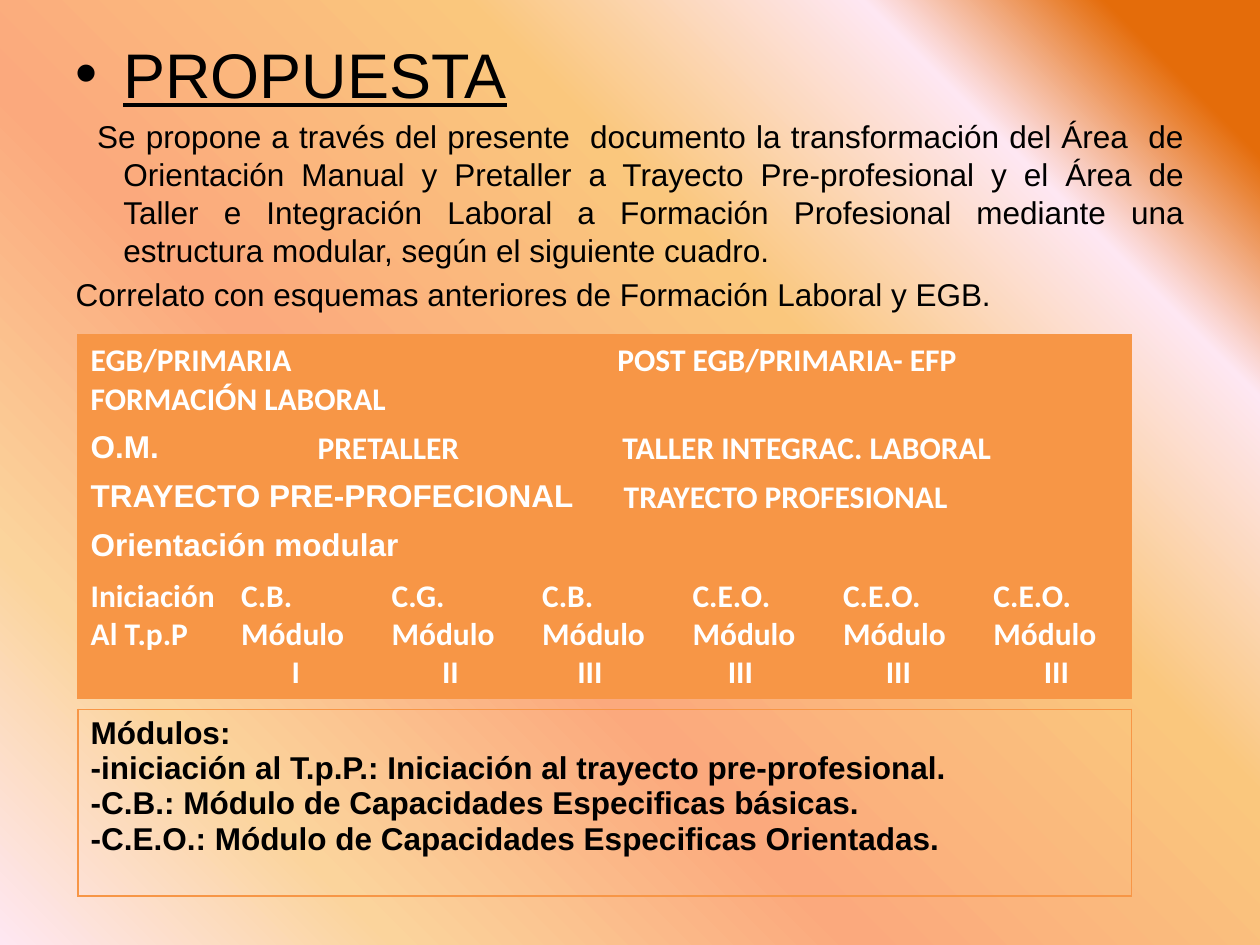
from lxml import etree
from pptx import Presentation
from pptx.dml.color import RGBColor
from pptx.enum.text import MSO_AUTO_SIZE, PP_ALIGN
from pptx.oxml.ns import qn
from pptx.util import Inches, Pt

ORANGE = RGBColor(0xF7, 0x96, 0x46)
WHITE = RGBColor(0xFF, 0xFF, 0xFF)
BLACK = RGBColor(0x00, 0x00, 0x00)
GRADIENT = [
    (7, RGBColor(0xE4, 0x6C, 0x0A)),
    (18, RGBColor(0xFE, 0xE7, 0xF2)),
    (36, RGBColor(0xFA, 0xC7, 0x7D)),
    (61, RGBColor(0xFB, 0xA9, 0x7D)),
    (82, RGBColor(0xFB, 0xD4, 0x9C)),
    (100, RGBColor(0xFE, 0xE7, 0xF2)),
]
LEFT, WIDTH = 0.62, 8.36
ROW_HEIGHT = 0.41
HANGING = 0.38

HEAD = {"name": "Arial", "size": Pt(36), "underline": True}
BODY = {"name": "Arial", "size": Pt(18)}
ARIAL = {"name": "Arial", "size": Pt(18), "bold": True}
CALIBRI = {"name": "Calibri", "size": Pt(18), "bold": True}

INTRO = (
    "Se propone a través del presente  documento la transformación del Área  de "
    "Orientación Manual y Pretaller a Trayecto Pre-profesional y el Área de Taller "
    "e Integración Laboral a Formación Profesional mediante una estructura modular, "
    "según el siguiente cuadro."
)

# Each paragraph: text, left margin, first-line indent, bullet, format
PARAGRAPHS = [
    ("PROPUESTA", HANGING, -HANGING, True, HEAD),
    (INTRO, HANGING, -0.21, False, BODY),
    ("Correlato con esquemas anteriores de Formación Laboral y EGB.",
     HANGING, -HANGING, False, BODY),
]

# Each band: top, column widths, cells as (lines, format, indent of last line)
BANDS = [
    (2.66, [4.18, 4.18], [(["EGB/PRIMARIA"], CALIBRI, 0),
                          (["POST EGB/PRIMARIA- EFP"], CALIBRI, 0)]),
    (2.97, [WIDTH], [(["FORMACIÓN LABORAL"], CALIBRI, 0)]),
    (3.36, [1.8, 2.42, 4.14], [(["O.M."], ARIAL, 0),
                               (["PRETALLER"], CALIBRI, 0),
                               (["TALLER INTEGRAC. LABORAL"], CALIBRI, 0)]),
    (3.75, [4.06, 4.3], [(["TRAYECTO PRE-PROFECIONAL"], ARIAL, 0),
                         (["TRAYECTO PROFESIONAL"], CALIBRI, 0.17)]),
    (4.14, [WIDTH], [(["Orientación modular"], ARIAL, 0)]),
]
MODULES = [("C.B.", "I", 0.4), ("C.G.", "II", 0.4), ("C.B.", "III", 0.28),
           ("C.E.O.", "III", 0.28), ("C.E.O.", "III", 0.34), ("C.E.O.", "III", 0.4)]
LEGEND = [
    "Módulos:",
    "-iniciación al T.p.P.: Iniciación al trayecto pre-profesional.",
    "-C.B.: Módulo de Capacidades Especificas básicas.",
    "-C.E.O.: Módulo de Capacidades Especificas Orientadas.",
]


class SlideBuilder:
    def __init__(self, prs):
        self.s = prs.slides.add_slide(prs.slide_layouts[1])
        title = self.s.shapes.title
        title.element.getparent().remove(title.element)

    def background(self, stops, angle):
        """Fill with (percent, colour) stops; angle runs anticlockwise."""
        fill = self.s.background.fill
        fill.gradient()
        fill.gradient_angle = angle
        stop_list = next(self.s.element.iter(qn("a:gsLst")))
        for old in list(stop_list):
            stop_list.remove(old)
        for percent, color in stops:
            stop = etree.SubElement(stop_list, qn("a:gs"), pos=str(percent * 1000))
            etree.SubElement(stop, qn("a:srgbClr"), val=str(color))

    def run(self, p, text, style, color):
        r = p.add_run()
        r.text = text
        r.font.color.rgb = color
        for name, value in style.items():
            setattr(r.font, name, value)

    def indent(self, p, margin, first=0):
        pPr = p._p.get_or_add_pPr()
        pPr.set("marL", str(Inches(margin)))
        pPr.set("indent", str(Inches(first)))
        return pPr

    def body(self, box, paragraphs):
        sp = self.s.placeholders[1]
        sp.left, sp.top, sp.width, sp.height = map(Inches, box)
        tf = sp.text_frame
        tf.auto_size = MSO_AUTO_SIZE.NONE
        for i, (text, margin, first, bullet, style) in enumerate(paragraphs):
            p = tf.add_paragraph() if i else tf.paragraphs[0]
            p.alignment = PP_ALIGN.JUSTIFY
            pPr = self.indent(p, margin, first)
            if bullet:
                etree.SubElement(pPr, qn("a:buChar"), char="•")
            else:
                etree.SubElement(pPr, qn("a:buNone"))
            self.run(p, text, style, BLACK)

    def border(self, cell):
        tcPr = cell._tc.get_or_add_tcPr()
        for i, side in enumerate("LRTB"):
            ln = etree.Element(qn(f"a:ln{side}"), w=str(Pt(1)))
            fill = etree.SubElement(ln, qn("a:solidFill"))
            etree.SubElement(fill, qn("a:srgbClr"), val=str(ORANGE))
            tcPr.insert(i, ln)

    def table(self, top, widths, cells, height=ROW_HEIGHT, filled=True):
        """Add a one-row table."""
        table = self.s.shapes.add_table(
            1, len(widths), Inches(LEFT), Inches(top), Inches(WIDTH), Inches(height)
        ).table
        table.first_row = table.horz_banding = False
        for i, (width, (lines, style, last_indent)) in enumerate(zip(widths, cells)):
            table.columns[i].width = Inches(width)
            cell = table.cell(0, i)
            if filled:
                cell.fill.solid()
                cell.fill.fore_color.rgb = ORANGE
            else:
                cell.fill.background()
            self.border(cell)
            tf = cell.text_frame
            for j, line in enumerate(lines):
                p = tf.add_paragraph() if j else tf.paragraphs[0]
                self.run(p, line, style, WHITE if filled else BLACK)
            if last_indent:
                self.indent(p, last_indent)


def main():
    prs = Presentation()
    prs.slide_width, prs.slide_height = Inches(10), Inches(7.5)
    slide = SlideBuilder(prs)
    slide.background(GRADIENT, 225)
    slide.body((0.5, 0.23, 9, 6.88), PARAGRAPHS)
    for top, widths, cells in BANDS:
        slide.table(top, widths, cells)

    modules = [(["Iniciación", "Al T.p.P"], CALIBRI, 0)]
    modules += [([code, "Módulo", number], CALIBRI, gap) for code, number, gap in MODULES]
    slide.table(4.53, [WIDTH / len(modules)] * len(modules), modules, height=1)
    slide.table(5.63, [WIDTH], [(LEGEND, ARIAL, 0)], height=1.48, filled=False)
    prs.save("out.pptx")


if __name__ == "__main__":
    main()
